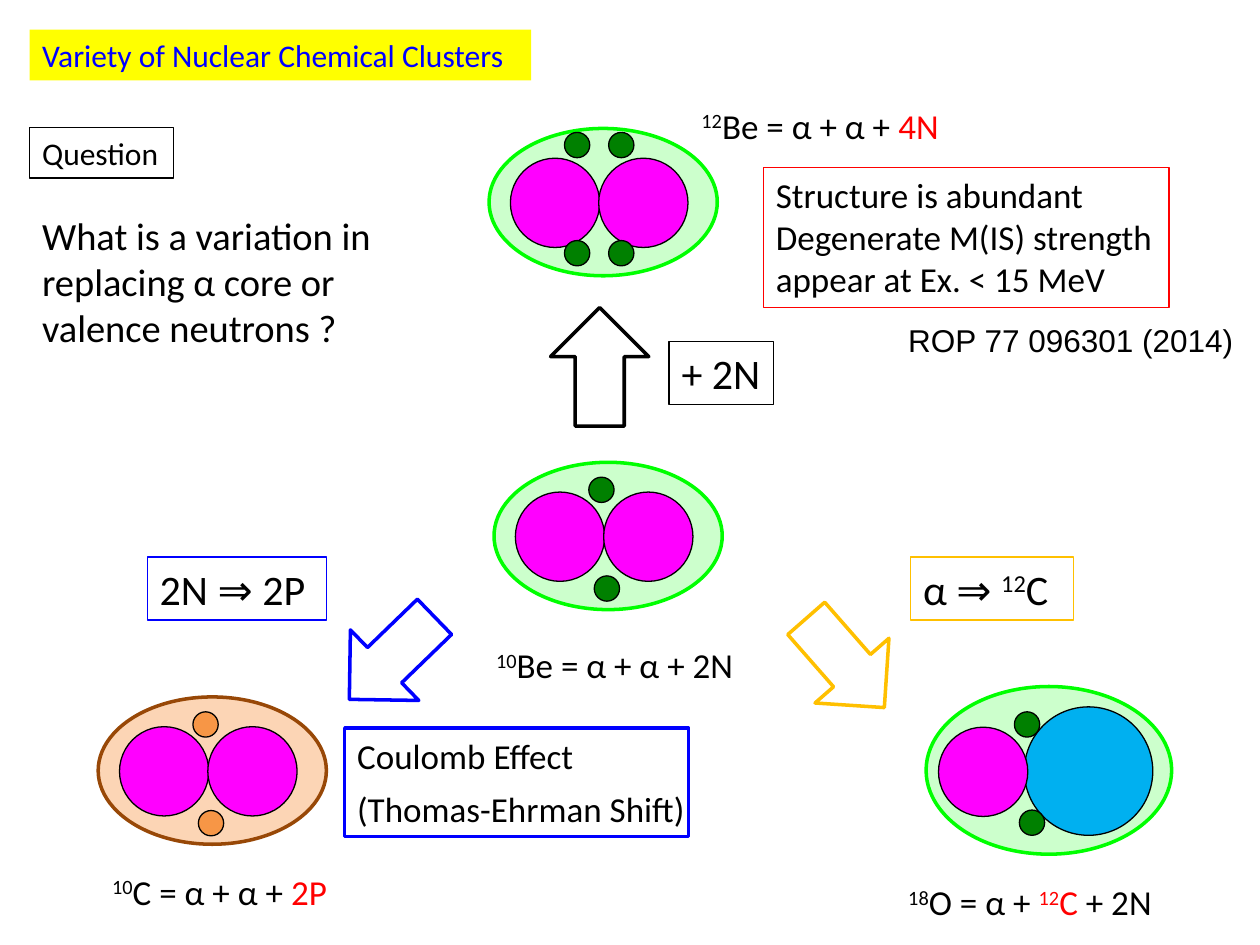
from dataclasses import dataclass
from typing import NamedTuple

from pptx import Presentation
from pptx.dml.color import RGBColor
from pptx.enum.shapes import MSO_SHAPE
from pptx.enum.text import MSO_ANCHOR, MSO_AUTO_SIZE, PP_ALIGN
from pptx.util import Cm, Pt


@dataclass(frozen=True)
class Theme:
    """Colours, fonts, type sizes and line widths of the slide."""
    black: str = "000000"
    blue: str = "0000FF"
    red: str = "FF0000"
    yellow: str = "FFFF00"
    amber: str = "FFC000"
    green: str = "00FF00"
    mint: str = "CCFFCC"
    brown: str = "984807"
    peach: str = "FCD5B5"
    alpha: str = "FF00FF"
    carbon: str = "00B0F0"
    neutron: str = "008000"
    proton: str = "F79646"
    font: str = "Calibri"
    citation_font: str = "Arial"
    small: int = 18
    body: int = 20
    question: int = 22
    large: int = 24
    thin: float = 0.75
    thick: float = 2


THEME = Theme()


class Box(NamedTuple):
    """A rectangle in centimetres."""
    left: float
    top: float
    width: float
    height: float

    def inside(self, left, top, width, height):
        """Return a box placed relative to this one."""
        return Box(self.left + left, self.top + top, width, height)

    def lengths(self):
        """Return the four values as slide lengths."""
        return [Cm(value) for value in self]


class Span(NamedTuple):
    """A piece of text with its own format."""
    text: str
    raised: bool = False
    color: str = THEME.black


def add_figure(page, kind, box, fill=None, line=None, weight=THEME.thin, rotation=0):
    """Add a preset shape with the given fill and outline."""
    figure = page.shapes.add_shape(kind, *box.lengths())
    figure.shadow.inherit = False
    figure.rotation = rotation
    if fill:
        figure.fill.solid()
        figure.fill.fore_color.rgb = RGBColor.from_string(fill)
    else:
        figure.fill.background()
    if line:
        figure.line.color.rgb = RGBColor.from_string(line)
        figure.line.width = Pt(weight)
    else:
        figure.line.fill.background()
    return figure


def add_text(page, box, lines, size=THEME.body, font=THEME.font, wrap=False,
             fill=None, line=None):
    """Add lines of spans, framed as a rectangle if a fill or line is given."""
    if fill or line:
        holder = add_figure(page, MSO_SHAPE.RECTANGLE, box, fill, line)
    else:
        holder = page.shapes.add_textbox(*box.lengths())
    frame = holder.text_frame
    frame.word_wrap = wrap
    frame.auto_size = MSO_AUTO_SIZE.SHAPE_TO_FIT_TEXT
    frame.vertical_anchor = MSO_ANCHOR.TOP
    for index, spans in enumerate(lines):
        para = frame.add_paragraph() if index else frame.paragraphs[0]
        para.alignment = PP_ALIGN.LEFT
        for span in spans:
            run = para.add_run()
            run.text = span.text
            run.font.name = font
            run.font.size = Pt(size)
            run.font.color.rgb = RGBColor.from_string(span.color)
            if span.raised:
                run.font._element.set("baseline", "30000")


def add_heading(page, box):
    """Place the slide title on its yellow band."""
    title = Span("Variety of Nuclear Chemical Clusters", color=THEME.blue)
    add_text(page, box, [[title]], THEME.small, fill=THEME.yellow)


def add_question(page, box):
    """Place the question tag and the question below it."""
    add_text(page, box.inside(0, 0, 2.9, 1.02), [[Span("Question")]],
             THEME.small, line=THEME.black)
    lines = ["What is a variation in", "replacing α core or", "valence neutrons ?"]
    add_text(page, box.inside(0, 1.57, box.width, 3.07),
             [[Span(text)] for text in lines], THEME.question)


def add_cluster(page, box, cores, nucleons, caption, caption_box, wrap=False,
                fill=THEME.mint, line=THEME.green, nucleon_color=THEME.neutron):
    """Draw a nucleus with its cores, valence nucleons and formula."""
    add_figure(page, MSO_SHAPE.OVAL, box, fill, line, THEME.thick)
    balls = cores + [(left, top, 0.51, nucleon_color) for left, top in nucleons]
    for left, top, diameter, color in balls:
        add_figure(page, MSO_SHAPE.OVAL, box.inside(left, top, diameter, diameter),
                   color, THEME.black)
    add_text(page, box.inside(*caption_box), [caption], wrap=wrap)


def add_transition(page, box, rotation, color, label, label_box):
    """Draw a block arrow with its framed label."""
    add_figure(page, MSO_SHAPE.UP_ARROW, box, None, color, THEME.thick, rotation)
    add_text(page, box.inside(*label_box), [label], THEME.large, line=color)


def add_findings(page, box):
    """Place the framed findings with the citation below."""
    lines = ["Structure is abundant", "Degenerate M(IS) strength",
             "appear at Ex. < 15 MeV"]
    add_text(page, box, [[Span(text)] for text in lines], line=THEME.red)
    add_text(page, box.inside(2.67, 2.97, 7.14, 1.02),
             [[Span("ROP 77 096301 (2014)")]], THEME.small, THEME.citation_font)


def add_coulomb_note(page, box):
    """Place the two lines on the Coulomb effect in their frame."""
    notes = [("Coulomb Effect", 4.93), ("(Thomas-Ehrman Shift)", 7.21)]
    for row, (text, width) in enumerate(notes):
        add_text(page, box.inside(0, row * 1.07, width, 1.12), [[Span(text)]])
    add_figure(page, MSO_SHAPE.RECTANGLE, box, None, THEME.blue, THEME.thick)


def add_clusters(page, area):
    """Place the four nuclei within the given area."""
    pair = [(left, 0.6, 1.8, THEME.alpha) for left in (0.43, 2.21)]
    two = [(1.91, 0.3), (2.02, 2.29)]
    four = [(left, top) for top in (0.08, 2.26) for left in (1.52, 2.41)]
    add_cluster(page, area.inside(9.96, 9.32, 4.6, 2.97), pair, two,
                [Span("10", True), Span("Be = α + α + 2N")],
                (-0.21, 3.53, 5.72, 1.12), wrap=True)
    add_cluster(page, area.inside(9.86, 2.59, 4.6, 2.97), pair, four,
                [Span("12", True), Span("Be = α + α + "), Span("4N", color=THEME.red)],
                (4.03, -0.61, 5.41, 1.12))
    add_cluster(page, area.inside(1.98, 14.05, 4.6, 2.97), pair, two,
                [Span("10", True), Span("C = α + α + "), Span("2P", color=THEME.red)],
                (0.03, 3.37, 4.95, 1.12), fill=THEME.peach, line=THEME.brown,
                nucleon_color=THEME.proton)
    add_cluster(page, area.inside(18.67, 13.84, 4.95, 3.38),
                [(1.98, 0.41, 2.59, THEME.carbon), (0.25, 0.82, 1.8, THEME.alpha)],
                [(1.78, 0.51), (1.88, 2.49)],
                [Span("18", True), Span("O = α + "), Span("12", True, THEME.red),
                 Span("C", color=THEME.red), Span(" + 2N")],
                (-0.61, 3.79, 6.71, 1.12), wrap=True)


def add_transitions(page, area):
    """Place the three arrows that lead away from the central nucleus."""
    add_transition(page, area.inside(11.1, 6.2, 1.98, 2.39), 0, THEME.black,
                   [Span("+ 2N")], (2.39, 0.68, 2.11, 1.27))
    add_transition(page, area.inside(6.91, 12.07, 1.98, 2.39), 225.9, THEME.blue,
                   [Span("2N ⇒ 2P")], (-3.94, -0.84, 3.61, 1.27))
    add_transition(page, area.inside(16.05, 12.17, 1.98, 2.39), 138.8, THEME.amber,
                   [Span("α ⇒ "), Span("12", True), Span("C")],
                   (2.31, -0.94, 3.28, 1.27))


def main():
    """Build the slide and save the deck."""
    deck = Presentation()
    deck.slide_width, deck.slide_height = Cm(25.4), Cm(19.05)
    page = deck.slides.add_slide(deck.slide_layouts[6])
    area = Box(0, 0, 25.4, 19.05)
    add_heading(page, area.inside(0.6, 0.6, 10.11, 1.02))
    add_clusters(page, area)
    add_transitions(page, area)
    add_findings(page, area.inside(15.39, 3.38, 8.18, 2.82))
    add_question(page, area.inside(0.6, 2.57, 7.57, 4.64))
    add_coulomb_note(page, area.inside(6.95, 14.68, 6.93, 2.18))
    deck.save("out.pptx")


if __name__ == "__main__":
    main()
